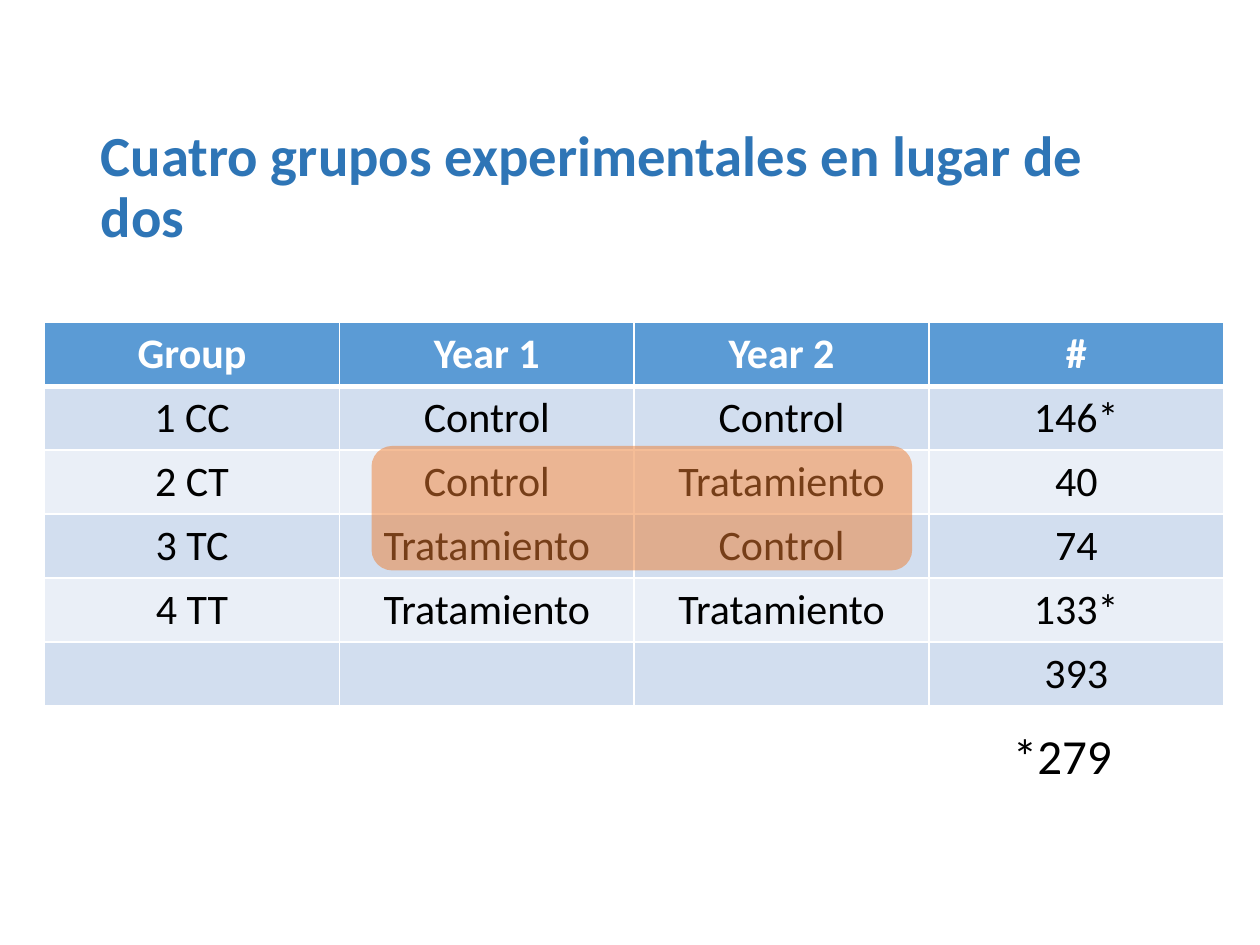
from lxml import etree
from pptx import Presentation
from pptx import util as u
from pptx.dml.color import RGBColor
from pptx.enum import shapes, text
from pptx.oxml.ns import qn

FONT = "Calibri"
HEADER = ["Group", "Year 1", "Year 2", "#"]
GROUPS = [
    ["1 CC", "Control", "Control", "146*"],
    ["2 CT", "Control", "Tratamiento", "40"],
    ["3 TC", "Tratamiento", "Control", "74"],
    ["4 TT", "Tratamiento", "Tratamiento", "133*"],
    ["", "", "", "393"],
]


def color(hex_string):
    return RGBColor.from_string(hex_string)


def box(left, top, width, height):
    return [u.Cm(value) for value in (left, top, width, height)]


def set_font(paragraph, size, hex_color, bold=False):
    paragraph.font.name = FONT
    paragraph.font.size = u.Pt(size)
    paragraph.font.bold = bold
    paragraph.font.color.rgb = color(hex_color)


def add_title(slide, area, wording):
    title = slide.shapes.title
    title.left, title.top, title.width, title.height = area
    frame = title.text_frame
    frame.text = wording
    frame.word_wrap = True
    frame.auto_size = text.MSO_AUTO_SIZE.NONE
    frame.vertical_anchor = text.MSO_ANCHOR.MIDDLE
    paragraph = frame.paragraphs[0]
    paragraph.alignment = text.PP_ALIGN.LEFT
    paragraph.line_spacing = 0.9
    set_font(paragraph, 32.4, "2E75B6", bold=True)


def set_borders(cell, widths, hex_color):
    """Draw the cell's sides; widths are points for left, right, top and bottom."""
    properties = cell._tc.get_or_add_tcPr()
    for side, width in zip("LRTB", widths):
        line = etree.SubElement(properties, qn(f"a:ln{side}"), w=str(u.Pt(width)))
        fill = etree.SubElement(line, qn("a:solidFill"))
        etree.SubElement(fill, qn("a:srgbClr"), val=hex_color)


def add_group_table(slide, area):
    rows = [HEADER] + GROUPS
    left, top, width, height = area
    table = slide.shapes.add_table(len(rows), len(HEADER), left, top, width, height).table
    for row_index, row in enumerate(rows):
        is_header = row_index == 0
        fill = "5B9BD5" if is_header else ("EAEFF7", "D2DEEF")[row_index % 2]
        top_width = 3 if row_index == 1 else 1
        bottom_width = 3 if is_header else 1
        for column_index, wording in enumerate(row):
            cell = table.cell(row_index, column_index)
            set_borders(cell, (1, 1, top_width, bottom_width), "FFFFFF")
            cell.fill.solid()
            cell.fill.fore_color.rgb = color(fill)
            cell.text = wording
            paragraph = cell.text_frame.paragraphs[0]
            paragraph.alignment = text.PP_ALIGN.CENTER
            set_font(paragraph, 24, "FFFFFF" if is_header else "000000", bold=is_header)


def add_total_note(slide, area, wording):
    frame = slide.shapes.add_textbox(*area).text_frame
    frame.word_wrap = False
    frame.auto_size = text.MSO_AUTO_SIZE.SHAPE_TO_FIT_TEXT
    frame.text = wording
    set_font(frame.paragraphs[0], 28, "000000")


def add_highlight(slide, area):
    """Lay a half-transparent frame over the groups that switch."""
    shape = slide.shapes.add_shape(shapes.MSO_SHAPE.ROUNDED_RECTANGLE, *area)
    shape.shadow.inherit = False
    shape.line.fill.background()
    shape.fill.solid()
    shape.fill.fore_color.rgb = color("ED7D31")
    fill_color = shape._element.spPr.find(qn("a:solidFill"))[0]
    etree.SubElement(fill_color, qn("a:alpha"), val="50000")


def main():
    presentation = Presentation()
    presentation.slide_width = u.Cm(25.4)
    presentation.slide_height = u.Cm(19.05)
    slide = presentation.slides.add_slide(presentation.slide_layouts[5])
    add_title(slide, box(1.78, 2.84, 21.89, 1.93),
              "Cuatro grupos experimentales en lugar de dos")
    add_group_table(slide, box(0.9, 6.5, 23.77, 7.62))
    add_total_note(slide, box(20.17, 14.5, 2.51, 1.45), "*279")
    add_highlight(slide, box(7.49, 8.99, 10.9, 2.51))
    presentation.save("out.pptx")


if __name__ == "__main__":
    main()
